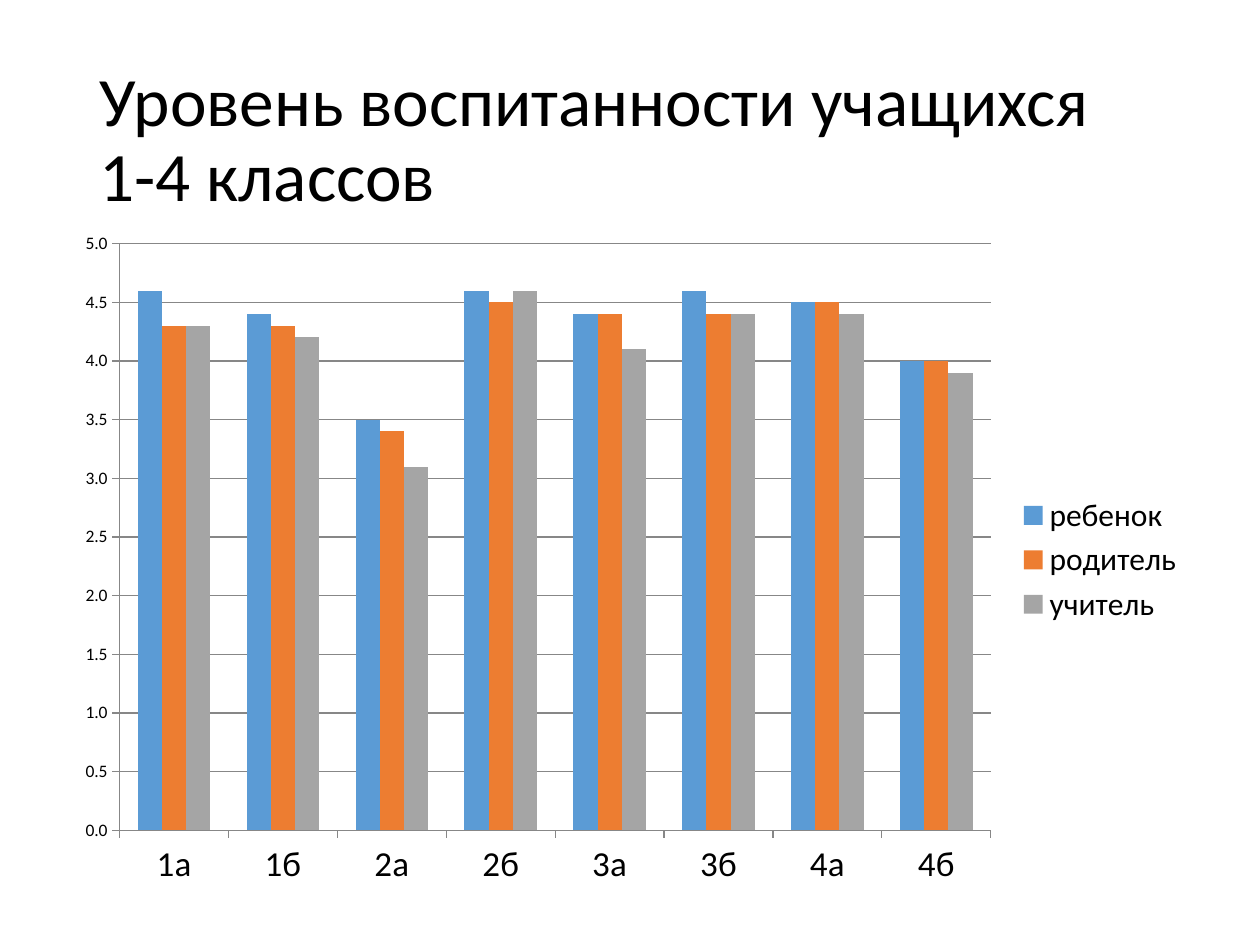
from dataclasses import dataclass

from pptx import Presentation
from pptx import util as u
from pptx.chart.data import CategoryChartData
from pptx.dml.color import RGBColor
from pptx.enum import chart as ch, text as t


@dataclass
class Theme:
    face: str = "Calibri"
    ink: str = "000000"
    rule: str = "878787"
    bars: tuple = ("5B9BD5", "ED7D31", "A5A5A5")
    head: float = 39.6
    cat: int = 20
    key: int = 18
    base: int = 10


def style(font, theme, size):
    font.name = theme.face
    font.size = u.Pt(size)
    font.color.rgb = RGBColor.from_string(theme.ink)


def write(frame, words, theme, size, align=t.PP_ALIGN.LEFT, lead=0.9):
    para = frame.paragraphs[0]
    para.text = words
    para.alignment, para.line_spacing = align, lead
    for run in para.runs:
        style(run.font, theme, size)


class Page:
    """Holds the theme and the slide; boxes are shares of the slide's size."""

    def __init__(self, deck, theme):
        self.theme = theme
        self.wide, self.high = deck.slide_width, deck.slide_height
        self.slide = deck.slides.add_slide(deck.slide_layouts[5])

    def box(self, x, y, w, h):
        return (int(x * self.wide), int(y * self.high),
                int(w * self.wide), int(h * self.high))

    def title(self, words, area):
        head = self.slide.shapes.title
        head.left, head.top, head.width, head.height = self.box(*area)
        frame = head.text_frame
        frame.word_wrap = True
        frame.auto_size = t.MSO_AUTO_SIZE.NONE
        frame.vertical_anchor = t.MSO_ANCHOR.MIDDLE
        write(frame, words, self.theme, self.theme.head)

    def line(self, form):
        form.line.color.rgb = RGBColor.from_string(self.theme.rule)
        form.line.width = u.Pt(0.75)

    def columns(self, cats, rows, area):
        theme = self.theme
        data = CategoryChartData(number_format="0.0")
        data.categories = cats
        for name, vals in rows.items():
            data.add_series(name, vals)
        chart = self.slide.shapes.add_chart(
            ch.XL_CHART_TYPE.COLUMN_CLUSTERED, *self.box(*area), data).chart
        chart.has_title = False
        style(chart.font, theme, theme.base)

        # Bars
        plot = chart.plots[0]
        plot.gap_width, plot.overlap, plot.vary_by_categories = 150, 0, False
        for bar, color in zip(plot.series, theme.bars):
            bar.format.fill.solid()
            bar.format.fill.fore_color.rgb = RGBColor.from_string(color)

        # Axes
        for axis in (chart.category_axis, chart.value_axis):
            axis.major_tick_mark = ch.XL_TICK_MARK.OUTSIDE
            axis.minor_tick_mark = ch.XL_TICK_MARK.NONE
            self.line(axis.format)
        style(chart.category_axis.tick_labels.font, theme, theme.cat)
        axis = chart.value_axis
        axis.minimum_scale, axis.maximum_scale, axis.major_unit = 0, 5, 0.5
        axis.tick_labels.number_format = "0.0"
        axis.tick_labels.number_format_is_linked = False
        axis.has_major_gridlines = True
        self.line(axis.major_gridlines.format)

        # Legend
        chart.has_legend = True
        chart.legend.position = ch.XL_LEGEND_POSITION.RIGHT
        chart.legend.include_in_layout = False
        style(chart.legend.font, theme, theme.key)


def main():
    deck = Presentation()
    deck.slide_width, deck.slide_height = u.Inches(10), u.Inches(7.5)
    page = Page(deck, Theme())

    # Title
    page.title("Уровень воспитанности учащихся \v1-4 классов",
               (0.069, 0.053, 0.862, 0.193))

    # Scores by class
    cats = [f"{year}{mark}" for year in range(1, 5) for mark in "аб"]
    rows = {
        "ребенок": (4.6, 4.4, 3.5, 4.6, 4.4, 4.6, 4.5, 4.0),
        "родитель": (4.3, 4.3, 3.4, 4.5, 4.4, 4.4, 4.5, 4.0),
        "учитель": (4.3, 4.2, 3.1, 4.6, 4.1, 4.4, 4.4, 3.9),
    }
    page.columns(cats, rows, (0.05, 0.233, 0.9, 0.719))

    deck.save("out.pptx")


if __name__ == "__main__":
    main()
